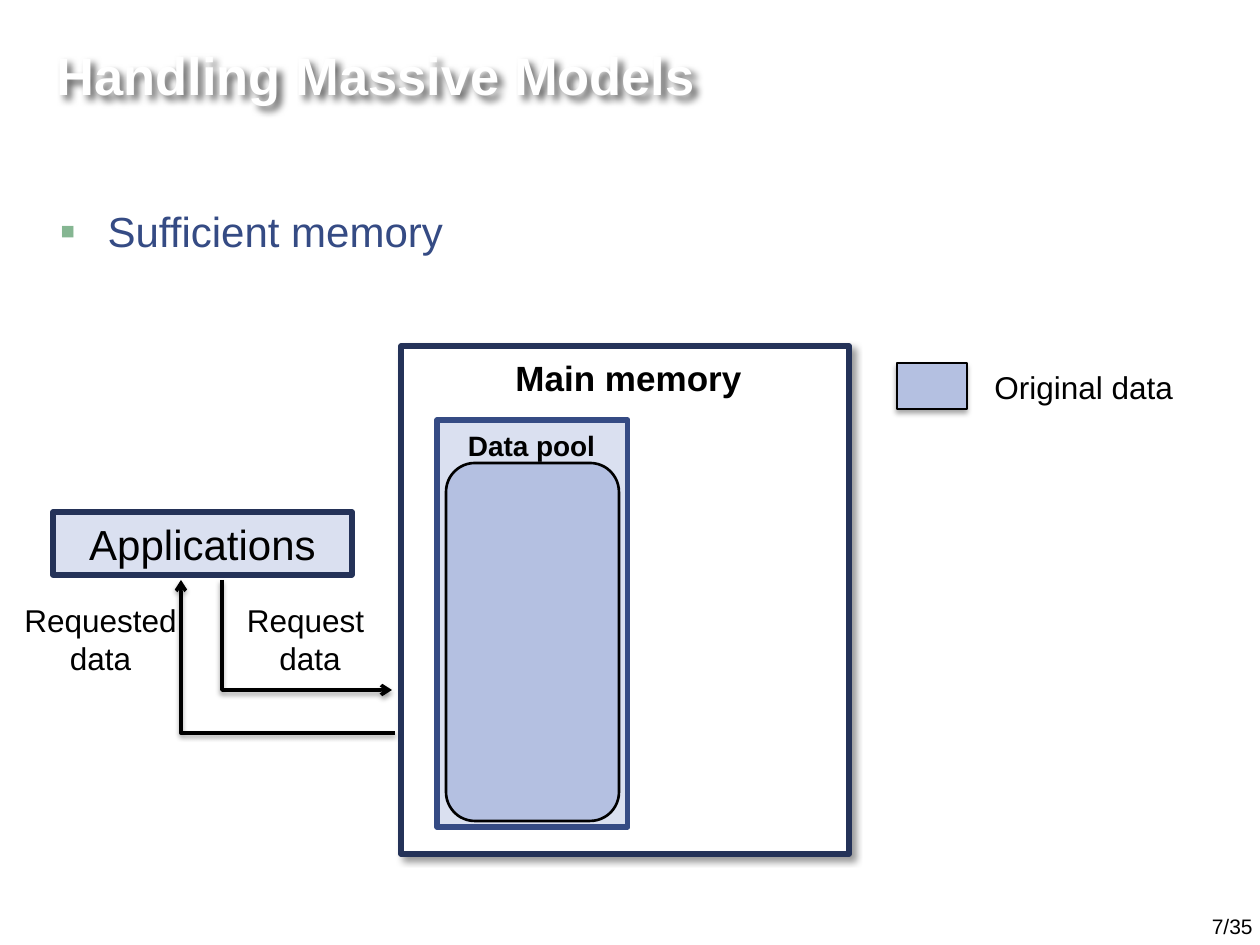
from lxml.etree import SubElement
from pptx import Presentation
from pptx.dml.color import RGBColor
from pptx.enum.shapes import MSO_CONNECTOR, MSO_SHAPE
from pptx.enum.text import MSO_ANCHOR, PP_ALIGN
from pptx.oxml.ns import qn
from pptx.util import Emu, Pt

PX = 914400 / 126
FONT = "Arial"
BLACK = RGBColor(0x00, 0x00, 0x00)
WHITE = RGBColor(0xFF, 0xFF, 0xFF)
NAVY = RGBColor(0x24, 0x32, 0x58)
BLUE = RGBColor(0x35, 0x4B, 0x84)
PALE = RGBColor(0xDA, 0xE0, 0xF0)
DATA = RGBColor(0xB4, 0xC0, 0xE1)
GREEN = RGBColor(0x85, 0xB6, 0x92)


def add_shadow(shape, alpha, blur, distance, angle):
    properties = shape._element.spPr
    effects = properties.find(qn("a:effectLst"))
    if effects is None:
        effects = SubElement(properties, qn("a:effectLst"))
    shadow = SubElement(effects, qn("a:outerShdw"), blurRad=str(Pt(blur)),
                        dist=str(Pt(distance)), dir=str(angle * 60000),
                        algn="ctr", rotWithShape="0")
    color = SubElement(shadow, qn("a:srgbClr"), val=str(BLACK))
    SubElement(color, qn("a:alpha"), val=str(alpha * 1000))


def write(shape, text, size, color=BLACK, bold=False, align=PP_ALIGN.CENTER):
    shape.text_frame.text = text
    for paragraph in shape.text_frame.paragraphs:
        paragraph.alignment = align
        for run in paragraph.runs:
            run.font.size = Pt(size)
            run.font.bold = bold
            run.font.color.rgb = color
            run.font.name = FONT


presentation = Presentation()
presentation.slide_width = Emu(round(1260 * PX))
presentation.slide_height = Emu(round(945 * PX))
slide = presentation.slides.add_slide(presentation.slide_layouts[1])
shapes = slide.shapes

title, body = shapes.title, slide.placeholders[1]
for placeholder, box in ((title, (44, 33, 1164, 83)), (body, (47, 194, 1160, 718))):
    placeholder.left, placeholder.top, placeholder.width, placeholder.height = [
        Emu(round(value * PX)) for value in box]

write(title, "Handling Massive Models", 30, WHITE, True, PP_ALIGN.LEFT)
title.text_frame.vertical_anchor = MSO_ANCHOR.MIDDLE
title.fill.background()
add_shadow(title, 60, 4, 3, 45)

write(body, "Sufficient memory", 24, BLUE, False, PP_ALIGN.LEFT)
bullet_paragraph = body.text_frame.paragraphs[0]
bullet_paragraph.line_spacing = 1.1
bullet_paragraph.space_before = Pt(0)
bullet_paragraph.space_after = Pt(6)
bullet_properties = bullet_paragraph._p.get_or_add_pPr()
indent = round(48 * PX)
bullet_properties.set("marL", str(indent))
bullet_properties.set("indent", str(-indent))
bullet_color = SubElement(bullet_properties, qn("a:buClr"))
SubElement(bullet_color, qn("a:srgbClr"), val=str(GREEN))
SubElement(bullet_properties, qn("a:buSzPct"), val="110000")
SubElement(bullet_properties, qn("a:buFont"), typeface=FONT)
SubElement(bullet_properties, qn("a:buChar"), char="▪")

RECT, ROUNDED = MSO_SHAPE.RECTANGLE, MSO_SHAPE.ROUNDED_RECTANGLE
boxes = [
    (RECT, (401, 346, 448, 508), WHITE, NAVY, 3, (40, 4, 3, 45), ""),
    (RECT, (53, 512, 299, 63), PALE, NAVY, 3, None, "Applications"),
    (RECT, (437, 420, 191, 407), PALE, BLUE, 3, None, ""),
    (ROUNDED, (446, 463, 173, 358), DATA, BLACK, 1.5, None, ""),
    (RECT, (897, 363, 70, 46), DATA, BLACK, 0.75, (35, 3.1, 1.8, 90), ""),
]
for kind, box, fill, line, width, shadow, text in boxes:
    shape = shapes.add_shape(kind, *[Emu(round(value * PX)) for value in box])
    shape.shadow.inherit = False
    shape.fill.solid()
    shape.fill.fore_color.rgb = fill
    shape.line.color.rgb = line
    shape.line.width = Pt(width)
    if shadow:
        add_shadow(shape, *shadow)
    if text:
        write(shape, text, 24)
        shape.text_frame.vertical_anchor = MSO_ANCHOR.MIDDLE

labels = [
    ("Main memory", (502, 350, 253, 55), 20, True, PP_ALIGN.CENTER),
    ("Data pool", (439, 422, 185, 47), 16, True, PP_ALIGN.CENTER),
    ("Requested\ndata", (11, 595, 179, 89), 18, False, PP_ALIGN.CENTER),
    ("Request \ndata", (234, 595, 152, 89), 18, False, PP_ALIGN.CENTER),
    ("Original data", (982, 362, 205, 50), 18, False, PP_ALIGN.LEFT),
    ("7/35", (971, 901, 294, 50), 12, False, PP_ALIGN.RIGHT),
]
for text, box, size, bold, align in labels:
    label = shapes.add_textbox(*[Emu(round(value * PX)) for value in box])
    write(label, text, size, BLACK, bold, align)
    label.text_frame.word_wrap = align == PP_ALIGN.RIGHT
    if align == PP_ALIGN.RIGHT:
        label.text_frame.vertical_anchor = MSO_ANCHOR.MIDDLE

arrows = [((181, 580, 395, 733), "a:headEnd"), ((222, 580, 392, 690), "a:tailEnd")]
for ends, arrow_end in arrows:
    connector = shapes.add_connector(
        MSO_CONNECTOR.ELBOW, *[Emu(round(value * PX)) for value in ends])
    connector.line.color.rgb = BLACK
    connector.line.width = Pt(2)
    line_properties = connector._element.spPr.find(qn("a:ln"))
    SubElement(line_properties, qn(arrow_end), type="arrow")
    geometry = connector._element.spPr.find(qn("a:prstGeom"))
    SubElement(geometry.find(qn("a:avLst")), qn("a:gd"), name="adj1", fmla="val 0")
    add_shadow(connector, 38, 3.1, 1.6, 90)

presentation.save("out.pptx")
